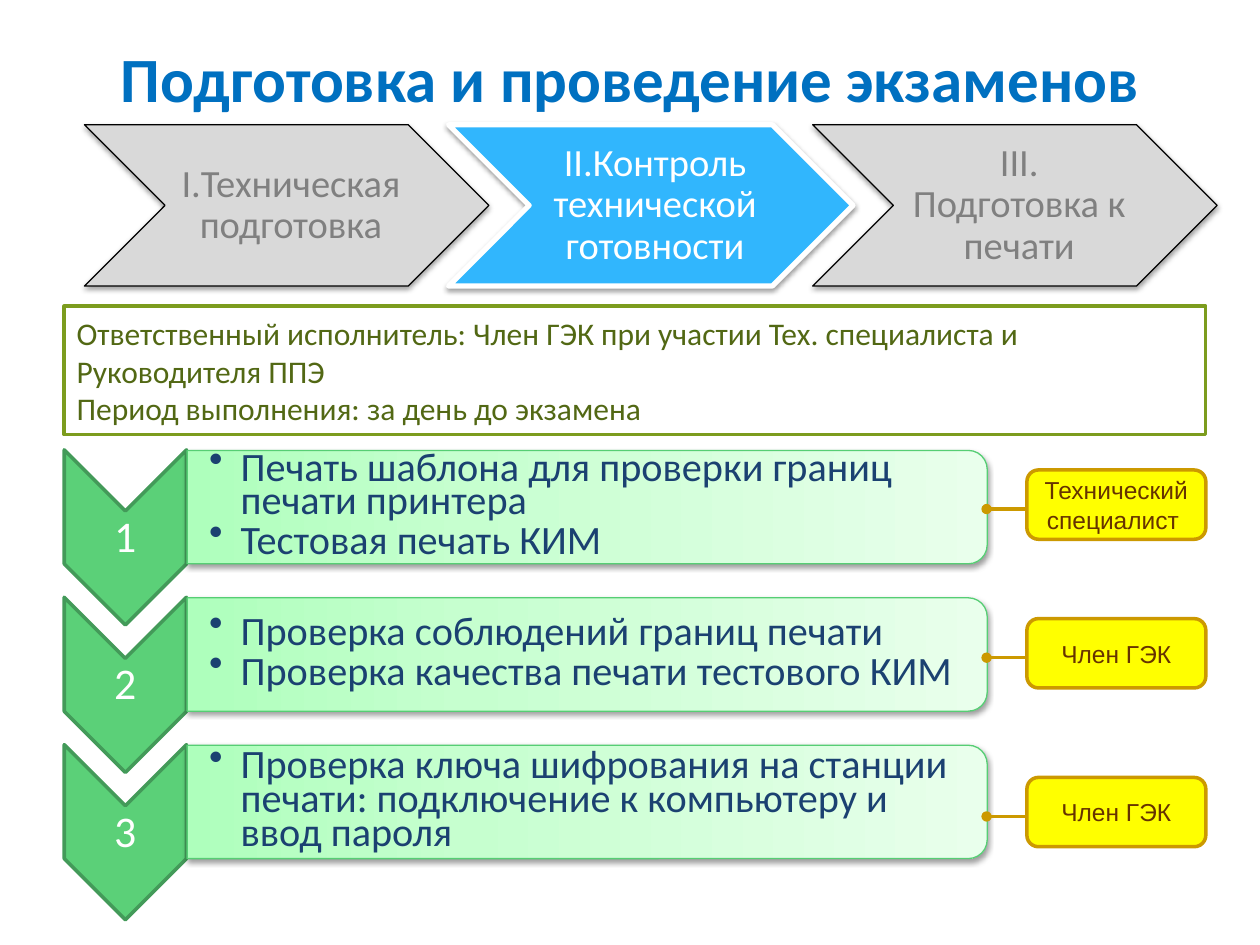
from lxml import etree
from pptx import Presentation
from pptx.dml.color import RGBColor
from pptx.enum.shapes import MSO_CONNECTOR, MSO_SHAPE as Shape
from pptx.enum.text import MSO_ANCHOR as Anchor, PP_ALIGN as Align
from pptx.oxml import parse_xml
from pptx.oxml.ns import nsdecls, qn
from pptx.util import Inches, Pt

TITLE = "Подготовка и проведение экзаменов"
STAGES = [
    ("I.Техническая подготовка", False),
    ("II.Контроль технической готовности", True),
    ("III. Подготовка к печати", False),
]
RESPONSIBLE = [
    "Ответственный исполнитель: Член ГЭК при участии Тех. специалиста и Руководителя ППЭ",
    "Период выполнения: за день до экзамена",
]
# Tasks of each step, the person in charge, top of that person's tag
STEPS = [
    (["Печать шаблона для проверки границ печати принтера", "Тестовая печать КИМ"],
     "Технический специалист ", 3.73),
    (["Проверка соблюдений границ печати", "Проверка качества печати тестового КИМ"],
     "Член ГЭК", 4.91),
    (["Проверка ключа шифрования на станции печати: подключение к компьютеру и ввод пароля"],
     "Член ГЭК", 6.17),
]
COLORS = {
    "title": "0070C0", "white": "FFFFFF", "black": "000000",
    "idle": "D9D9D9", "idle_text": "808080", "active": "31B6FD",
    "panel_line": "7C9C1E", "panel_text": "526814",
    "step": "5BD078", "step_line": "439A59",
    "card_line": "56CE74", "card_text": "1B4171",
    "tag": "FFFF00", "tag_line": "CC9900", "tag_text": "663300",
}
CARD_GRADIENT = [(0, "AEFFBC"), (35, "C6FFCF"), (100, "E9FFEC")]
STEP_PITCH = 1.17
STAGE_PITCH = 2.89


def rgb(name):
    return RGBColor.from_string(COLORS[name])


def write(shape, lines, size, color, font="Calibri", bold=False, align=Align.LEFT,
          spacing=None, after=None, bullets=False, insets=None):
    frame = shape.text_frame
    frame.word_wrap = True
    frame.vertical_anchor = Anchor.MIDDLE
    if insets:
        left, other = insets
        frame.margin_left = Inches(left)
        frame.margin_top = frame.margin_right = frame.margin_bottom = Inches(other)
    for index, line in enumerate(lines):
        para = frame.add_paragraph() if index else frame.paragraphs[0]
        if bullets:
            props = para._p.get_or_add_pPr()
            props.set("marL", str(Inches(0.25)))
            props.set("indent", str(-Inches(0.25)))
            etree.SubElement(props, qn("a:buChar")).set("char", "•")
        para.alignment = align
        if spacing:
            para.line_spacing = spacing
        if after:
            para.space_after = Pt(after)
        span = para.add_run()
        span.text = line
        span.font.size = Pt(size)
        span.font.name = font
        span.font.bold = bold
        span.font.color.rgb = rgb(color)


def add_box(slide, kind, at, fill, line, width, rotation=0):
    box = slide.shapes.add_shape(kind, *map(Inches, at))
    box.rotation = rotation
    box.shadow.inherit = False
    if fill:
        box.fill.solid()
        box.fill.fore_color.rgb = rgb(fill)
    box.line.color.rgb = rgb(line)
    box.line.width = Pt(width)
    return box


def add_text(slide, at, lines, size, color, **options):
    write(slide.shapes.add_textbox(*map(Inches, at)), lines, size, color, **options)


def add_shadow(box):
    effects = box._element.spPr.find(qn("a:effectLst"))
    effects.append(parse_xml(
        f'<a:outerShdw {nsdecls("a")} blurRad="{Pt(3.1)}" dist="{Pt(1.6)}" dir="5400000" '
        f'rotWithShape="0"><a:srgbClr val="{COLORS["black"]}"><a:alpha val="38000"/>'
        '</a:srgbClr></a:outerShdw>'))


def fill_gradient(box):
    """Three stops running up the unrotated shape, so left to right once it is turned."""
    stops = "".join(f'<a:gs pos="{position * 1000}"><a:srgbClr val="{color}"/></a:gs>'
                    for position, color in CARD_GRADIENT)
    gradient = parse_xml(f'<a:gradFill {nsdecls("a")} rotWithShape="1"><a:gsLst>{stops}</a:gsLst>'
                         '<a:lin ang="16200000" scaled="0"/></a:gradFill>')
    box._element.spPr.find(qn("a:prstGeom")).addnext(gradient)


def add_link(slide, y):
    link = slide.shapes.add_connector(MSO_CONNECTOR.STRAIGHT, Inches(8.15), Inches(y),
                                      Inches(7.83), Inches(y))
    link.line.color.rgb = rgb("tag_line")
    link.line.width = Pt(1.75)
    etree.SubElement(link.line._get_or_add_ln(), qn("a:tailEnd")).set("type", "oval")
    etree.SubElement(link._element.spPr, qn("a:effectLst"))


def add_step(slide, index, tasks, person, tag_top):
    shift = index * STEP_PITCH
    add_box(slide, Shape.CHEVRON, (0.3, 3.78 + shift, 1.39, 0.97),
            "step", "step_line", 2, rotation=90)
    add_text(slide, (0.51, 4.06 + shift, 0.97, 0.42), [str(index + 1)], 25, "white",
             align=Align.CENTER, spacing=0.9, insets=(0.02, 0.02))
    card = add_box(slide, Shape.ROUND_2_SAME_RECTANGLE, (4.21, 0.85 + shift, 0.9, 6.35),
                   None, "card_line", 0.75, rotation=90)
    fill_gradient(card)
    add_shadow(card)
    add_text(slide, (1.48, 3.62 + shift, 6.31, 0.82), tasks, 23, "card_text",
             spacing=0.7, after=3.5, bullets=True, insets=(0.18, 0.02))
    tag = add_box(slide, Shape.ROUNDED_RECTANGLE, (8.15, tag_top, 1.42, 0.55),
                  "tag", "tag_line", 2)
    write(tag, [person], 14, "tag_text", font="Arial", align=Align.CENTER)
    add_link(slide, tag_top + 0.31)


def add_stage(slide, index, label, active):
    left = 0.67 + index * STAGE_PITCH
    fill, line, width, color = (("active", "white", 3, "white") if active
                                else ("idle", "black", 0.75, "idle_text"))
    add_shadow(add_box(slide, Shape.CHEVRON, (left, 0.99, 3.21, 1.28), fill, line, width))
    add_text(slide, (left + 0.64, 0.99, 1.93, 1.28), [label], 22, color,
             align=Align.CENTER, spacing=0.9, insets=(0.1, 0.03))


def main():
    deck = Presentation()
    deck.slide_width, deck.slide_height = Inches(10), Inches(7.5)
    slide = deck.slides.add_slide(deck.slide_layouts[5])
    title = slide.shapes.title
    title.left, title.top, title.width, title.height = map(Inches, (0.5, 0.18, 9, 0.87))
    write(title, [TITLE], 36, "title", bold=True, align=Align.CENTER)
    panel = add_box(slide, Shape.RECTANGLE, (0.51, 2.43, 9.06, 1.02), "white", "panel_line", 2)
    write(panel, RESPONSIBLE, 18, "panel_text")
    for index, step in enumerate(STEPS):
        add_step(slide, index, *step)
    for index, stage in enumerate(STAGES):
        add_stage(slide, index, *stage)
    deck.save("out.pptx")


if __name__ == "__main__":
    main()
